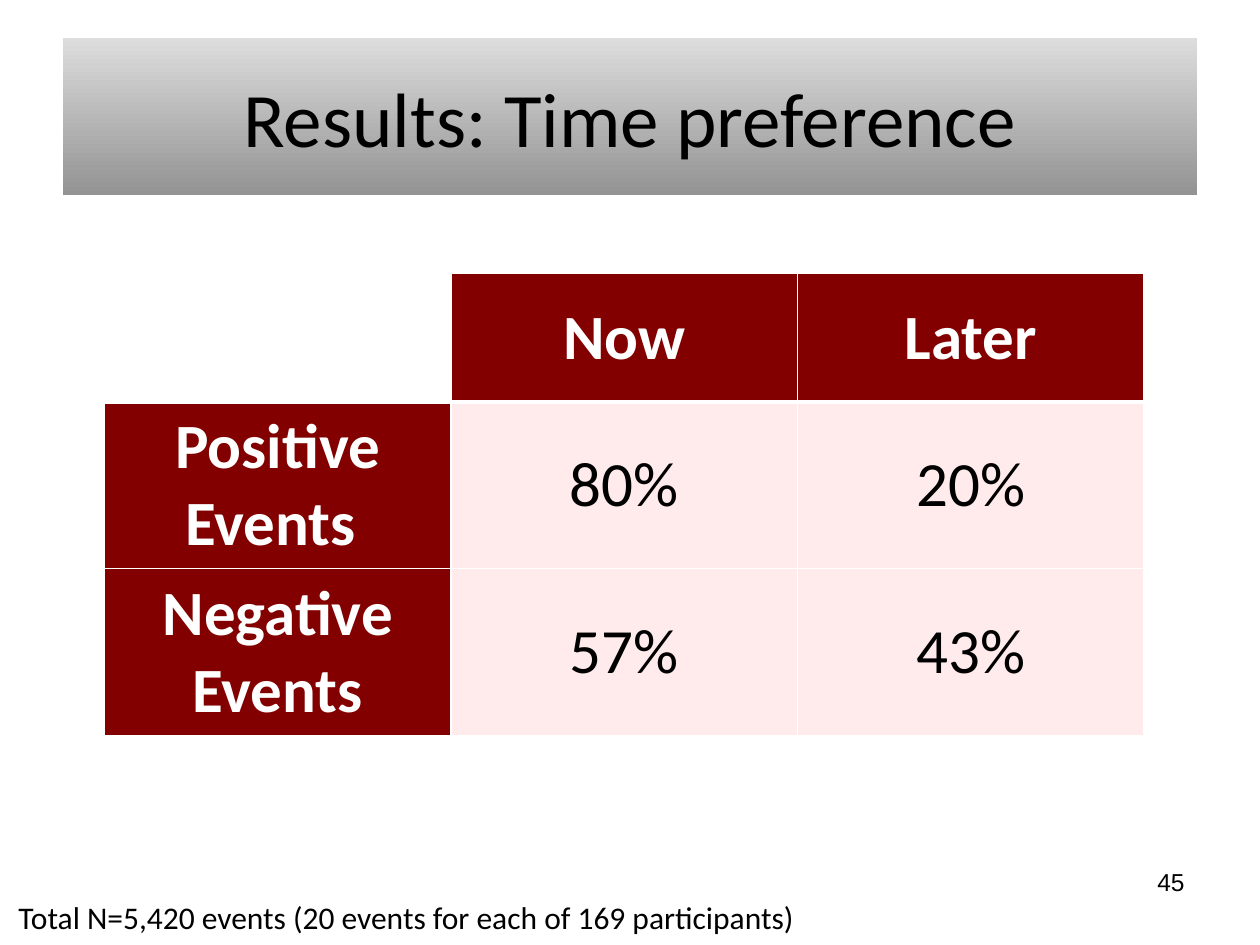
from dataclasses import dataclass

from lxml.etree import SubElement
from pptx import Presentation
from pptx.dml.color import RGBColor
from pptx.enum.text import MSO_ANCHOR, PP_ALIGN
from pptx.oxml.ns import qn
from pptx.util import Inches, Pt


@dataclass(frozen=True)
class Theme:
    font: str = "Calibri"
    number_font: str = "Arial"
    black: str = "000000"
    white: str = "FFFFFF"
    head: str = "820000"
    body: str = "FFEBEB"
    band: tuple = ("DDDDDD", "939393")
    title: int = 44
    cell: int = 36
    note: int = 18
    number: int = 14


class Deck:
    """Holds the theme and the slide being built."""

    def __init__(self, theme):
        self.theme = theme
        self.file = Presentation()
        self.file.slide_width = Inches(10)
        self.file.slide_height = Inches(7.5)
        self.slide = self.file.slides.add_slide(self.file.slide_layouts[5])

    def label(self, frame, text, size, align, color=None, font=None, bold=False):
        """Fill a text frame and format its runs."""
        frame.text = text
        for para in frame.paragraphs:
            para.alignment = align
            for run in para.runs:
                run.font.name = font or self.theme.font
                run.font.size = Pt(size)
                run.font.bold = bold
                run.font.color.rgb = RGBColor.from_string(color or self.theme.black)

    def title(self, text, box):
        shape = self.slide.shapes.title
        shape.left, shape.top, shape.width, shape.height = map(Inches, box)
        shape.fill.gradient()
        shape.fill.gradient_angle = 270
        for stop, color in zip(shape.fill.gradient_stops, self.theme.band):
            stop.color.rgb = RGBColor.from_string(color)
        shape.text_frame.vertical_anchor = MSO_ANCHOR.MIDDLE
        self.label(shape.text_frame, text, self.theme.title, PP_ALIGN.CENTER)

    def text(self, text, box, size, align, font=None, wrap=True):
        frame = self.slide.shapes.add_textbox(*map(Inches, box)).text_frame
        frame.word_wrap = wrap
        self.label(frame, text, size, align, font=font)

    def border(self, cell, heavy):
        """Draw white cell edges, with a thicker lower edge if heavy."""
        props = cell._tc.get_or_add_tcPr()
        for spot, side in enumerate(("lnL", "lnR", "lnT", "lnB")):
            width = 3 if heavy and side == "lnB" else 1
            line = props.makeelement(qn(f"a:{side}"), {"w": str(Pt(width))})
            fill = SubElement(line, qn("a:solidFill"))
            SubElement(fill, qn("a:srgbClr"), val=self.theme.white)
            props.insert(spot, line)

    def table(self, rows, box, heights):
        """Build a table whose first row and first column are headings."""
        look = self.theme
        table = self.slide.shapes.add_table(
            len(rows), len(rows[0]), *map(Inches, box)).table
        for row, height in zip(table.rows, heights):
            row.height = Inches(height)
        for r, row in enumerate(rows):
            for c, text in enumerate(row):
                cell = table.cell(r, c)
                head = r == 0 or c == 0
                shade = look.head if head else look.body
                cell.fill.solid()
                cell.fill.fore_color.rgb = RGBColor.from_string(
                    shade if text else look.white)
                cell.vertical_anchor = MSO_ANCHOR.MIDDLE
                self.label(cell.text_frame, text, look.cell, PP_ALIGN.CENTER,
                           look.white if head else look.black, bold=head)
                self.border(cell, heavy=r == 0)


def main():
    theme = Theme()
    deck = Deck(theme)
    deck.title("Results: Time preference", (0.5, 0.3, 9, 1.25))
    deck.table(
        [["", "Now", "Later"],
         ["Positive Events ", "80%", "20%"],
         ["Negative Events", "57%", "43%"]],
        (0.83, 2.17, 8.25, 3.62), (1.02, 1.3, 1.3))
    deck.text("Total N=5,420 events (20 events for each of 169 participants)",
              (0.01, 7.08, 6.43, 0.4), theme.note, PP_ALIGN.CENTER, wrap=False)
    deck.text("45", (7.17, 6.83, 2.33, 0.52), theme.number, PP_ALIGN.RIGHT,
              font=theme.number_font)
    deck.file.save("out.pptx")


if __name__ == "__main__":
    main()
